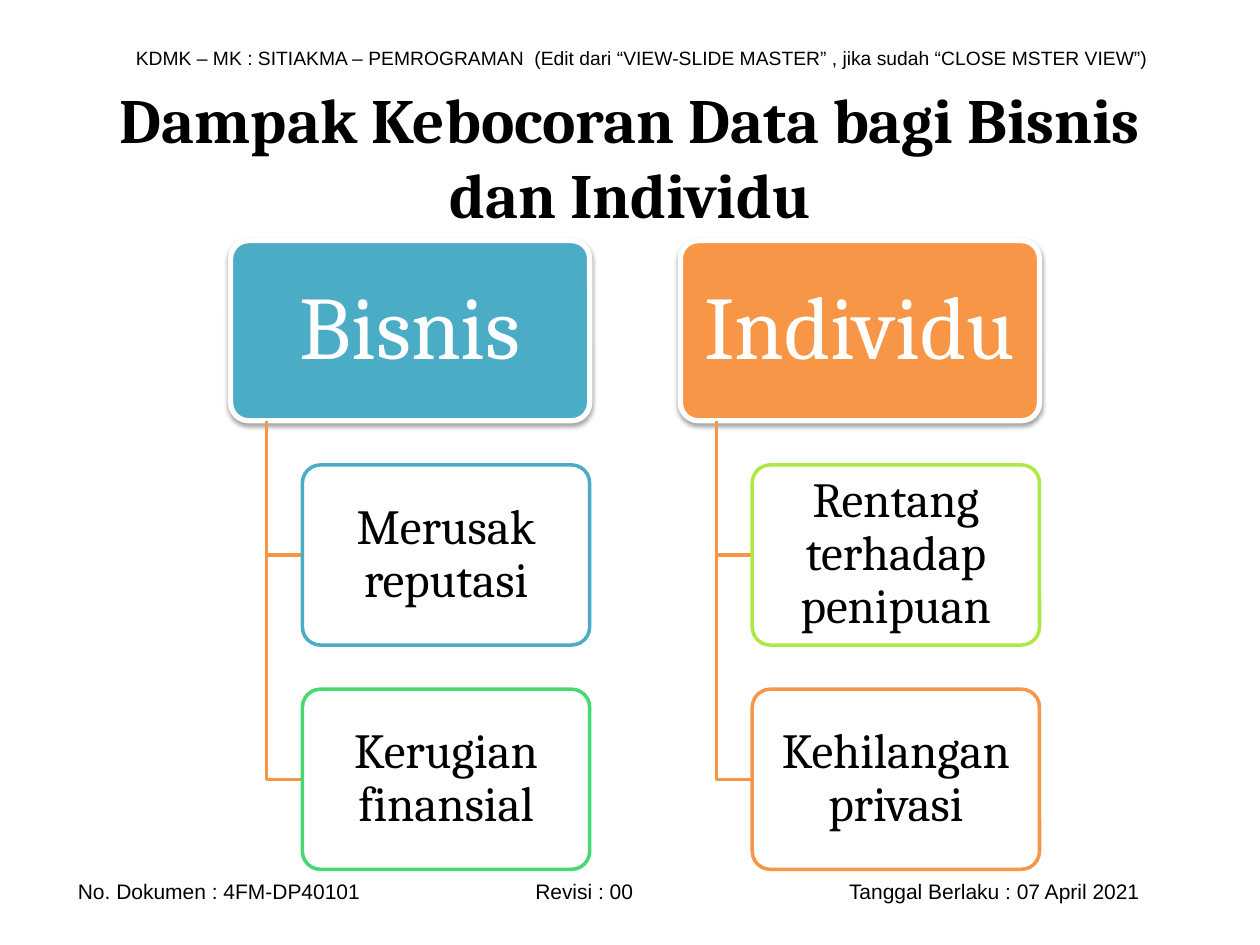
import pptx
import pptx.util
import pptx.dml.color
import pptx.enum.shapes
import pptx.enum.text
import pptx.oxml
import pptx.oxml.ns
import lxml.etree

Inches = pptx.util.Inches
Pt = pptx.util.Pt
RGBColor = pptx.dml.color.RGBColor
PP_ALIGN = pptx.enum.text.PP_ALIGN
qn = pptx.oxml.ns.qn

BLACK = RGBColor(0x00, 0x00, 0x00)
WHITE = RGBColor(0xFF, 0xFF, 0xFF)
TEAL = RGBColor(0x4B, 0xAC, 0xC6)
ORANGE = RGBColor(0xF7, 0x96, 0x46)
GREEN = RGBColor(0x47, 0xD8, 0x72)
LIME = RGBColor(0xAC, 0xE9, 0x46)

SHADOW = (
    '<a:effectLst xmlns:a="http://schemas.openxmlformats.org/drawingml/2006/main">'
    '<a:outerShdw blurRad="39370" dist="20320" dir="5400000" rotWithShape="0">'
    '<a:srgbClr val="000000"><a:alpha val="38000"/></a:srgbClr>'
    '</a:outerShdw></a:effectLst>'
)

prs = pptx.Presentation()
prs.slide_width, prs.slide_height = Inches(10), Inches(7.5)
s = prs.slides.add_slide(prs.slide_layouts[6])


def add_text(sp, text, font, size, color, align, bold=False, tabs=()):
    tf = sp.text_frame
    tf.word_wrap = True
    tf.vertical_anchor = pptx.enum.text.MSO_ANCHOR.MIDDLE
    p = tf.paragraphs[0]
    p.text = text
    p.alignment = align
    if tabs:
        tab_list = lxml.etree.SubElement(p._p.get_or_add_pPr(), qn("a:tabLst"))
        for pos in tabs:
            lxml.etree.SubElement(tab_list, qn("a:tab"), pos=str(Inches(pos)), algn="l")
    for r in p.runs:
        r.font.name, r.font.size, r.font.bold = font, Pt(size), bold
        r.font.color.rgb = color
    return p


def add_card(x, y, w, text, size, color, fill, line, line_width, margins):
    sp = s.shapes.add_shape(pptx.enum.shapes.MSO_SHAPE.ROUNDED_RECTANGLE,
                            Inches(x), Inches(y), Inches(w), Inches(CARD_H))
    sp.adjustments[0] = 0.1
    sp.shadow.inherit = False
    sp.fill.solid()
    sp.fill.fore_color.rgb = fill
    sp.line.color.rgb = line
    sp.line.width = Pt(line_width)
    p = add_text(sp, text, "Cambria", size, color, PP_ALIGN.CENTER)
    p.line_spacing = 0.9
    tf = sp.text_frame
    tf.margin_left = tf.margin_right = Inches(margins[0])
    tf.margin_top = tf.margin_bottom = Inches(margins[1])
    return sp


header = s.shapes.add_textbox(Inches(0.98), Inches(0.31), Inches(8.35), Inches(0.29))
add_text(header, "KDMK – MK : SITIAKMA – PEMROGRAMAN  (Edit dari “VIEW-SLIDE MASTER” , "
         "jika sudah “CLOSE MSTER VIEW”)", "Arial", 11, BLACK, PP_ALIGN.LEFT)

footer = s.shapes.add_textbox(Inches(0.52), Inches(6.92), Inches(9.13), Inches(0.3))
add_text(footer, "No. Dokumen : 4FM-DP40101\tRevisi : 00\tTanggal Berlaku : 07 April 2021",
         "Arial", 12, BLACK, PP_ALIGN.LEFT, tabs=(3.63, 6.12))

title = s.shapes.add_textbox(Inches(0.5), Inches(0.61), Inches(9), Inches(1.25))
add_text(title, "Dampak Kebocoran Data bagi Bisnis dan Individu",
         "Cambria", 36, BLACK, PP_ALIGN.CENTER, bold=True)

TOP, CARD_H, STEP = 1.91, 1.43, 1.78
HEAD_W, CHILD_W = 2.85, 2.28
CHILD_DX = HEAD_W - CHILD_W
STEM_DX = CHILD_DX / 2

columns = [
    (1.83, "Bisnis", TEAL, [("Merusak reputasi", TEAL), ("Kerugian finansial", GREEN)]),
    (5.4, "Individu", ORANGE, [("Rentang terhadap penipuan", LIME), ("Kehilangan privasi", ORANGE)]),
]

for x, heading, fill, children in columns:
    head = add_card(x, TOP, HEAD_W, heading, 51, WHITE, fill, WHITE, 3, (0.11, 0.07))
    sp_pr = head._element.spPr
    sp_pr.replace(sp_pr.find(qn("a:effectLst")), pptx.oxml.parse_xml(SHADOW))

    for i, (text, color) in enumerate(children, 1):
        y = TOP + i * STEP
        mid = y + CARD_H / 2
        stem_x = Inches(x + STEM_DX)
        fb = s.shapes.build_freeform(stem_x, Inches(TOP + CARD_H))
        fb.add_line_segments([(stem_x, Inches(mid)), (Inches(x + CHILD_DX), Inches(mid))],
                             close=False)
        branch = fb.convert_to_shape()
        branch.shadow.inherit = False
        branch.fill.background()
        branch.line.color.rgb = ORANGE
        branch.line.width = Pt(2)

        child = add_card(x + CHILD_DX, y, CHILD_W, text, 28, BLACK, WHITE, color, 2, (0.06, 0.04))
        rgb = child._element.spPr.find(qn("a:solidFill")).find(qn("a:srgbClr"))
        lxml.etree.SubElement(rgb, qn("a:alpha"), val="90000")

prs.save("out.pptx")
